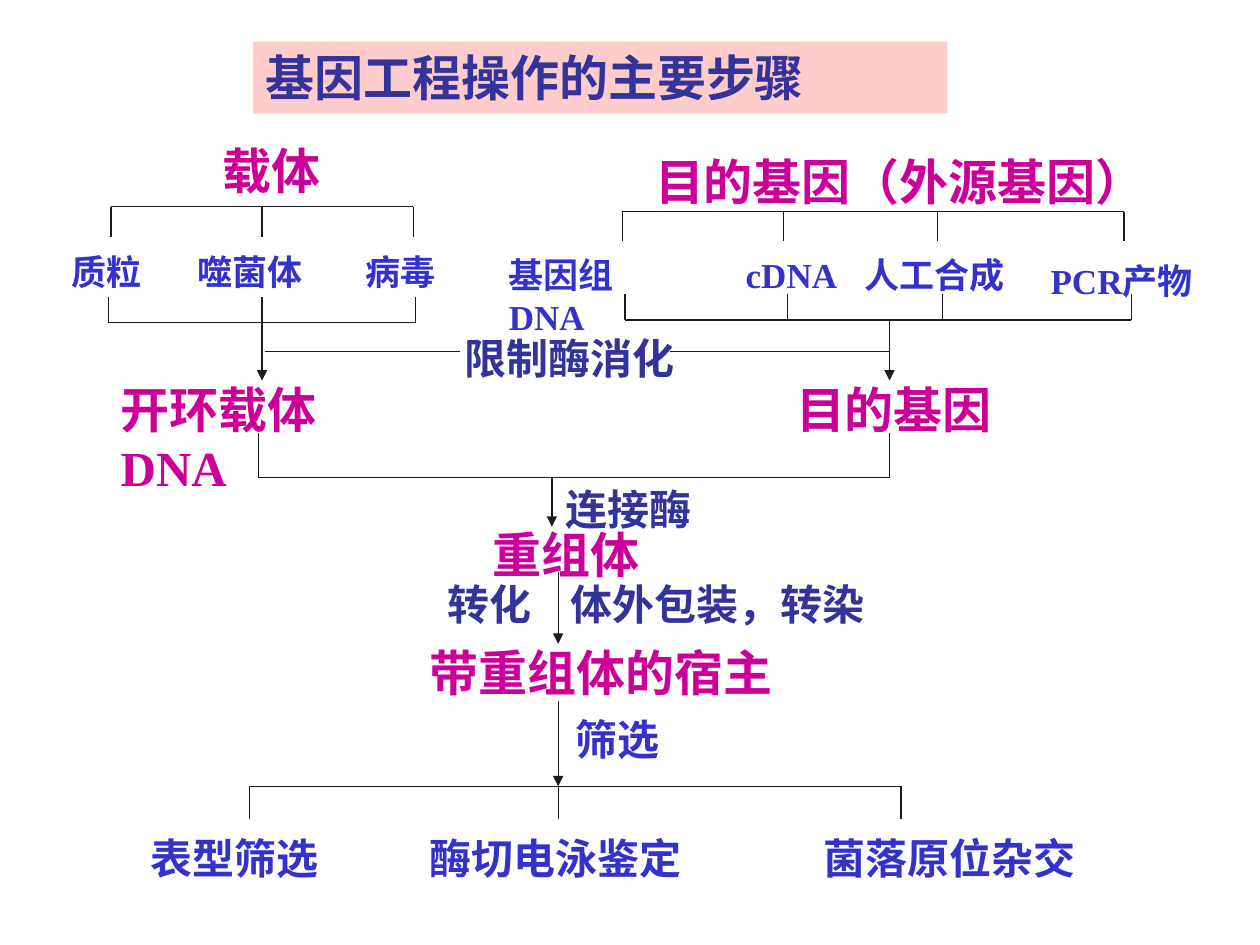
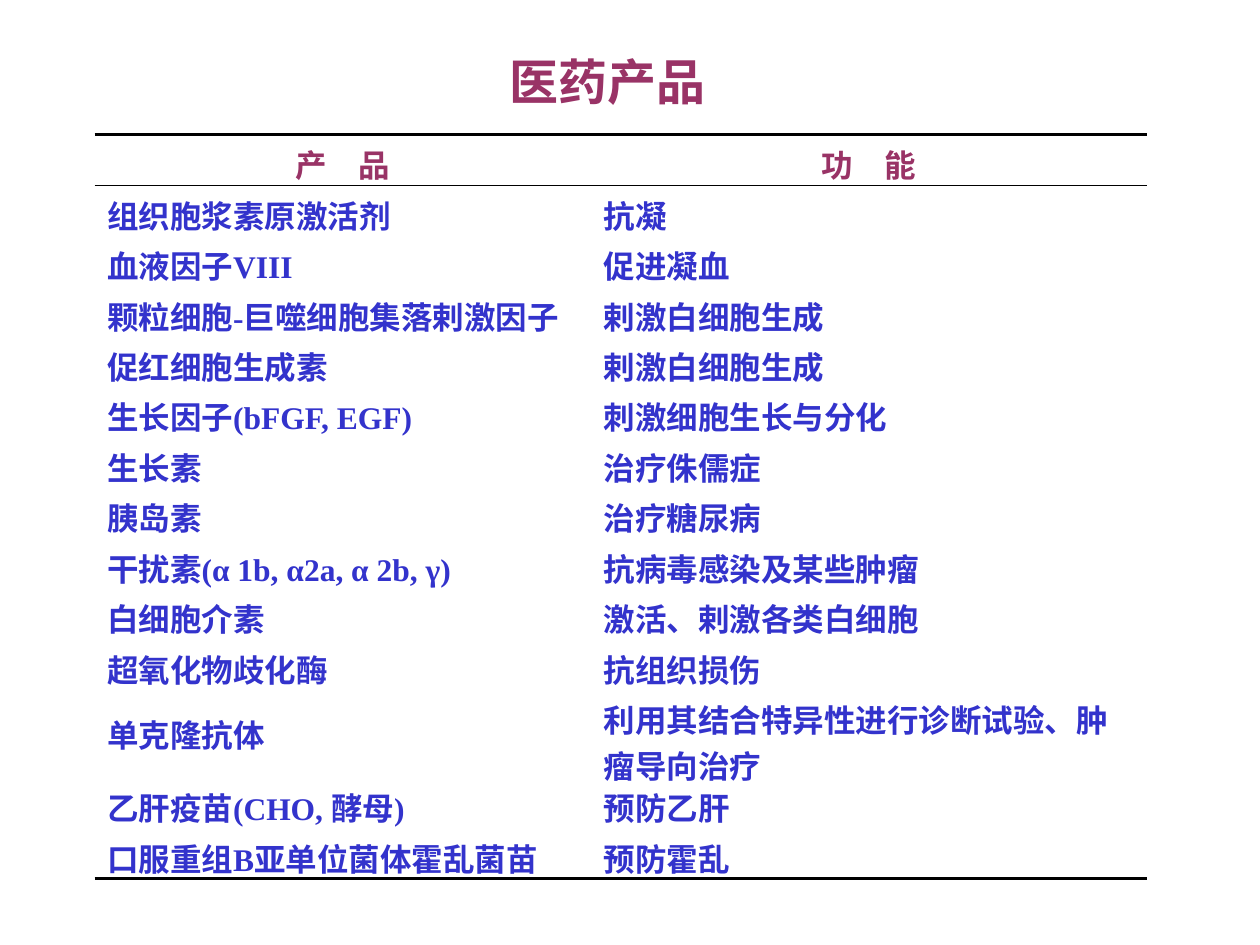
from lxml.etree import SubElement
from pptx import Presentation
from pptx.dml.color import RGBColor
from pptx.enum.lang import MSO_LANGUAGE_ID as Lang
from pptx.enum.shapes import MSO_CONNECTOR as Connector, MSO_SHAPE as Shape
from pptx.enum.text import MSO_ANCHOR as Anchor, PP_ALIGN as Align
from pptx.oxml import parse_xml
from pptx.oxml.ns import nsdecls, qn
from pptx.util import Inches, Pt

SLIDE_W, SLIDE_H = Inches(10), Inches(7.5)
CELL = SLIDE_W / 100  # the grid has 100 columns and 75 rows of square cells
FONT = "Times New Roman"
COLORS = {
    "band": "FFCCCC",
    "navy": "333399",
    "blue": "3333CC",
    "magenta": "CC0099",
    "plum": "993366",
    "line": "1C1C1C",
    "rule": "000000",
}

# Text roles: size and colour
TITLE = (28, "navy")
STAGE = (28, "magenta")
STEP = (24, "navy")
SCREEN = (24, "blue")
SOURCE = (20, "blue")
TABLE_TITLE = (28, "plum")
HEADER = (18, "plum")
ENTRY = (18, "blue")

PRODUCTS = [
    ("产　品", "功　能"),
    ("组织胞浆素原激活剂", "抗凝"),
    ("血液因子VIII", "促进凝血"),
    ("颗粒细胞-巨噬细胞集落剌激因子", "剌激白细胞生成"),
    ("促红细胞生成素", "剌激白细胞生成"),
    ("生长因子(bFGF, EGF)", "刺激细胞生长与分化"),
    ("生长素", "治疗侏儒症"),
    ("胰岛素", "治疗糖尿病"),
    ("干扰素(α 1b, α2a, α 2b, γ)", "抗病毒感染及某些肿瘤"),
    ("白细胞介素", "激活、剌激各类白细胞"),
    ("超氧化物歧化酶", "抗组织损伤"),
    ("单克隆抗体", "利用其结合特异性进行诊断试验、肿瘤导向治疗"),
    ("乙肝疫苗(CHO, 酵母)", "预防乙肝"),
    ("口服重组B亚单位菌体霍乱菌苗", "预防霍乱"),
]
TALL_ROW = 11  # the only entry that takes two lines


def grid(*cells):
    return [round(cell * CELL) for cell in cells]


def color(name):
    return RGBColor.from_string(COLORS[name])


def write(frame, text, role, align=Align.LEFT):
    size, color_name = role
    frame.text = text
    para = frame.paragraphs[0]
    para.alignment = align
    for span in para.runs:
        font = span.font
        font.name, font.size, font.bold = FONT, Pt(size), True
        font.color.rgb = color(color_name)
        font.language_id = Lang.SIMPLIFIED_CHINESE
    return para


def top_frame(shape, wrap):
    frame = shape.text_frame
    frame.word_wrap = wrap
    frame.vertical_anchor = Anchor.TOP
    return frame


def label(page, text, role, left, top, width, wrap=False, align=Align.LEFT):
    height = role[0] * 0.2
    box = page.shapes.add_textbox(*grid(left, top, width, height))
    return write(top_frame(box, wrap), text, role, align)


def title_band(page, text, left, top, width, height):
    band = page.shapes.add_shape(Shape.RECTANGLE, *grid(left, top, width, height))
    band.shadow.inherit = False
    band.fill.solid()
    band.fill.fore_color.rgb = color("band")
    band.line.fill.background()
    write(top_frame(band, True), text, TITLE)


def line(page, x1, y1, x2, y2, arrow=False):
    link = page.shapes.add_connector(Connector.STRAIGHT, *grid(x1, y1, x2, y2))
    link.line.color.rgb = color("line")
    link.line.width = Pt(0.75)
    if arrow:
        SubElement(link.line._get_or_add_ln(), qn("a:tailEnd"), type="triangle")
    SubElement(link._element.spPr, qn("a:effectLst"))


def bracket(page, bar_y, stem_y, columns):
    """A bar with a stem at each column, pointing down or up to stem_y."""
    line(page, columns[0], bar_y, columns[-1], bar_y)
    for x in columns:
        line(page, x, bar_y, x, stem_y)


def arrow(page, x, top, bottom):
    line(page, x, top, x, bottom, arrow=True)


def set_borders(cell, widths):
    """Rule the sides named in widths (points) and clear the others."""
    properties = cell._tc.get_or_add_tcPr()
    for side in ("lnB", "lnT", "lnR", "lnL"):
        points = widths.get(side, 0)
        paint = "<a:noFill/>"
        if points:
            paint = f'<a:solidFill><a:srgbClr val="{COLORS["rule"]}"/></a:solidFill>'
        edge = f'<a:{side} {nsdecls("a")} w="{Pt(points)}">{paint}</a:{side}>'
        properties.insert(0, parse_xml(edge))


def draw_sources(page):
    # Vectors
    label(page, "载体", STAGE, 16.7, 10.7, 9.8)
    bracket(page, 16.4, 18.8, (8.8, 20.8, 32.8))
    for text, left, width in (("质粒", 4.7, 7.6), ("噬菌体", 14.7, 11), ("病毒", 28, 7.6)):
        label(page, text, SOURCE, left, 19.4, width)
    bracket(page, 25.6, 23.6, (8.6, 20.8, 33))

    # Target genes
    label(page, "目的基因（外源基因）", STAGE, 51, 11.5, 40.9)
    bracket(page, 16.8, 19.1, (49.4, 62.2, 74.4, 89.2))
    label(page, "基因组DNA", SOURCE, 39.4, 19.6, 15.8, wrap=True)
    label(page, "cDNA", SOURCE, 58.2, 19.6, 9.3)
    label(page, "人工合成", SOURCE, 67.6, 19.6, 13.1)
    label(page, "PCR产物", SOURCE, 82.4, 19.1, 17.6, wrap=True).line_spacing = 1.3
    bracket(page, 25.4, 23.3, (49.6, 62.5, 74.8, 89.8))


def draw_recombination(page):
    # Digestion
    arrow(page, 20.8, 25.6, 30.2)
    arrow(page, 70.6, 25.4, 30.2)
    line(page, 21, 27.9, 36.5, 27.9)
    line(page, 53.2, 27.9, 70.6, 27.9)
    label(page, "限制酶消化", STEP, 35.9, 25.9, 18.7)
    label(page, "开环载体DNA", STAGE, 8.6, 29.6, 25, wrap=True)
    label(page, "目的基因", STAGE, 62.2, 29.6, 17.6)

    # Ligation
    bracket(page, 37.9, 34.4, (20.5, 70.6))
    arrow(page, 43.8, 37.9, 41.8)
    label(page, "连接酶", STEP, 43.9, 37.9, 12)
    label(page, "重组体", STAGE, 38.1, 41.1, 13.7)

    # Transfer into the host
    arrow(page, 44.3, 45.4, 51.1)
    label(page, "转化", STEP, 34.5, 45.4, 8.7)
    label(page, "体外包装，转染", STEP, 44.3, 45.4, 25.3)
    label(page, "带重组体的宿主", STAGE, 33.1, 50.5, 29.2)


def draw_screening(page):
    arrow(page, 44.3, 55.6, 62.4)
    label(page, "筛选", SCREEN, 44.7, 56.1, 8.7)
    bracket(page, 62.4, 65, (19.8, 44.3, 71.5))
    methods = (("表型筛选", 11, 15.3), ("酶切电泳鉴定", 33.1, 22), ("菌落原位杂交", 64.4, 22))
    for text, left, width in methods:
        label(page, text, SCREEN, left, 65.6, width)


def product_table(page, left, top, widths):
    heights = [6.9 if i == TALL_ROW else 4 for i in range(len(PRODUCTS))]
    table = page.shapes.add_table(
        len(PRODUCTS), 2, *grid(left, top, sum(widths), sum(heights))
    ).table
    table.first_row = table.horz_banding = False
    for column, width in zip(table.columns, grid(*widths)):
        column.width = width
    for row, height in zip(table.rows, grid(*heights)):
        row.height = height

    # Rules above and below the header and under the last row
    last = len(PRODUCTS) - 1
    rules = {0: {"lnT": 2, "lnB": 1}, 1: {"lnT": 1}, last: {"lnB": 2}}
    for i, entries in enumerate(PRODUCTS):
        role, align = (HEADER, Align.CENTER) if i == 0 else (ENTRY, Align.LEFT)
        for j, text in enumerate(entries):
            cell = table.cell(i, j)
            cell.fill.background()
            cell.vertical_anchor = Anchor.MIDDLE
            write(cell.text_frame, text, role, align)
            set_borders(cell, rules.get(i, {}))


def main():
    deck = Presentation()
    deck.slide_width, deck.slide_height = SLIDE_W, SLIDE_H
    blank = deck.slide_layouts[6]

    # Steps of genetic engineering
    page = deck.slides.add_slide(blank)
    title_band(page, "基因工程操作的主要步骤", 20.1, 3.3, 55.1, 5.7)
    draw_sources(page)
    draw_recombination(page)
    draw_screening(page)

    # Medical products
    page = deck.slides.add_slide(blank)
    label(page, "医药产品", TABLE_TITLE, 39.4, 3.6, 17.6, align=Align.CENTER)
    product_table(page, 7.5, 10.7, (39.4, 44.1))

    deck.save("out.pptx")


if __name__ == "__main__":
    main()
